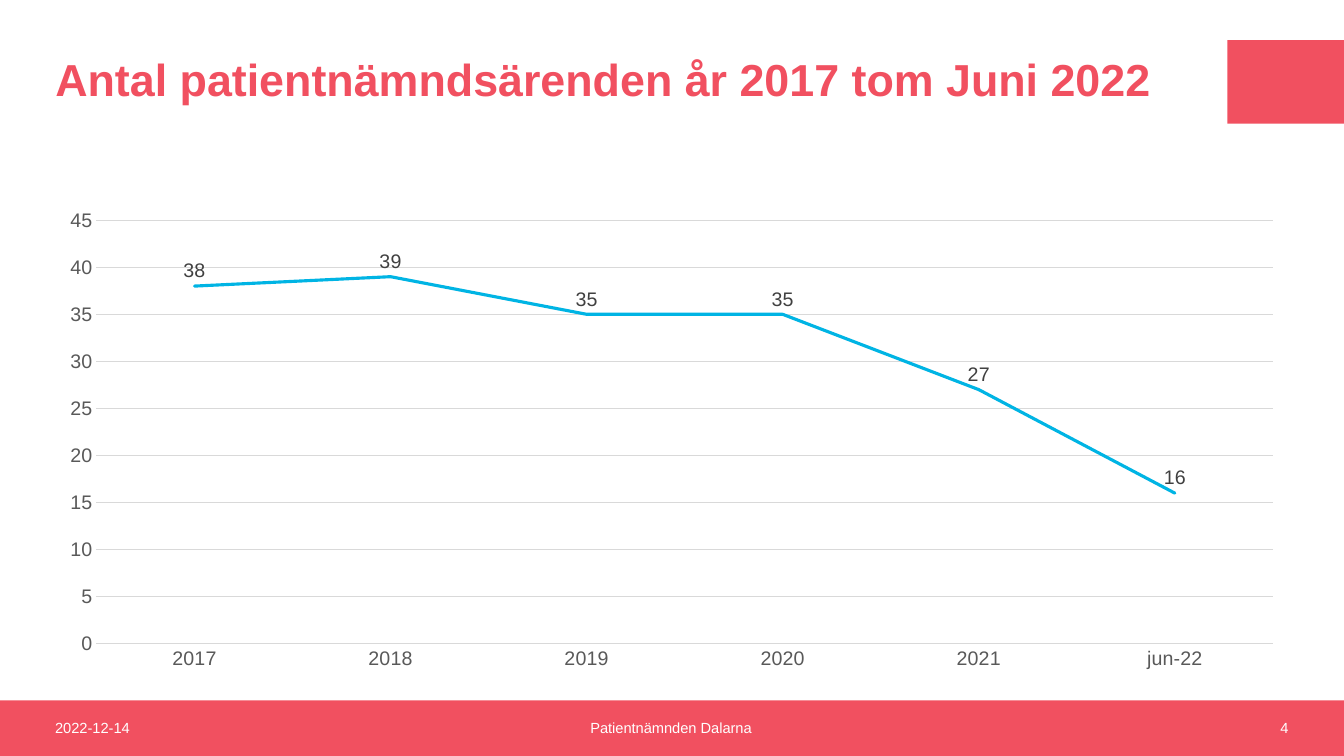
from dataclasses import dataclass

from lxml import etree
from pptx import Presentation
from pptx.chart.data import CategoryChartData
from pptx.dml.color import RGBColor
from pptx.enum.chart import XL_CHART_TYPE, XL_LABEL_POSITION, XL_MARKER_STYLE, XL_TICK_MARK
from pptx.enum.shapes import MSO_SHAPE
from pptx.enum.text import MSO_ANCHOR, PP_ALIGN
from pptx.util import Cm, Pt

# Content
TITLE = "Antal patientnämndsärenden år 2017 tom Juni 2022"
CASES = {"2017": 38, "2018": 39, "2019": 35, "2020": 35, "2021": 27, "jun-22": 16}
FOOTER = [  # text, left, width (cm), alignment
    ("2022-12-14", 1.14, 7.62, PP_ALIGN.LEFT),
    ("Patientnämnden Dalarna", 9.93, 13.97, PP_ALIGN.CENTER),
    ("4", 25.1, 7.62, PP_ALIGN.RIGHT),
]
BANDS = [  # left, top, width, height (cm)
    (0, 17.65, 33.87, 1.4),
    (30.93, 1.01, 2.94, 2.11),
]


@dataclass(frozen=True)
class Theme:
    font: str = "Arial"
    red: RGBColor = RGBColor(0xF1, 0x50, 0x60)
    blue: RGBColor = RGBColor(0x00, 0xB4, 0xE4)
    white: RGBColor = RGBColor(0xFF, 0xFF, 0xFF)
    axis_text: RGBColor = RGBColor(0x59, 0x59, 0x59)
    label_text: RGBColor = RGBColor(0x40, 0x40, 0x40)
    grid: RGBColor = RGBColor(0xD9, 0xD9, 0xD9)
    title_size: Pt = Pt(32)
    chart_size: Pt = Pt(14)
    footer_size: Pt = Pt(10.5)


THEME = Theme()


def style_font(font, size, color, bold=False):
    font.name, font.size, font.bold = THEME.font, size, bold
    font.color.rgb = color


def style_line(line, color, width):
    line.color.rgb = color
    line.width = Pt(width)


def add_band(slide, box):
    band = slide.shapes.add_shape(MSO_SHAPE.RECTANGLE, *map(Cm, box))
    band.shadow.inherit = False
    band.fill.solid()
    band.fill.fore_color.rgb = THEME.red
    band.line.fill.background()


def set_title(slide):
    title = slide.shapes.title
    title.left, title.top, title.width, title.height = map(Cm, (1.14, 0.38, 29.49, 3.35))
    title.text_frame.text = TITLE
    title.text_frame.vertical_anchor = MSO_ANCHOR.MIDDLE
    heading = title.text_frame.paragraphs[0]
    heading.alignment = PP_ALIGN.LEFT
    heading.line_spacing = 0.9
    style_font(heading.font, THEME.title_size, THEME.red, bold=True)


def add_footer_part(slide, text, left, width, alignment):
    frame = slide.shapes.add_textbox(Cm(left), Cm(17.65), Cm(width), Cm(1.37)).text_frame
    frame.word_wrap = True
    frame.vertical_anchor = MSO_ANCHOR.MIDDLE
    frame.text = text
    frame.paragraphs[0].alignment = alignment
    style_font(frame.paragraphs[0].font, THEME.footer_size, THEME.white)


def add_cases_chart(slide):
    cases = CategoryChartData()
    cases.categories = list(CASES)
    cases.add_series("Series 1", list(CASES.values()))
    chart = slide.shapes.add_chart(
        XL_CHART_TYPE.LINE, Cm(1.14), Cm(5.03), Cm(31.57), Cm(12.09), cases
    ).chart
    chart.has_legend = chart.has_title = False
    style_font(chart.font, THEME.chart_size, THEME.axis_text)

    # Axes
    years, counts = chart.category_axis, chart.value_axis
    for axis in (years, counts):
        axis.major_tick_mark = axis.minor_tick_mark = XL_TICK_MARK.NONE
        style_font(axis.tick_labels.font, THEME.chart_size, THEME.axis_text)
    style_line(years.format.line, THEME.grid, 0.75)
    counts.format.line.fill.background()
    counts.minimum_scale, counts.maximum_scale, counts.major_unit = 0, 45, 5
    style_line(counts.major_gridlines.format.line, THEME.grid, 0.75)

    # Line and its values
    plot = chart.plots[0]
    plot.vary_by_categories = False
    trend = plot.series[0]
    trend.smooth = False
    trend.marker.style = XL_MARKER_STYLE.NONE
    style_line(trend.format.line, THEME.blue, 2.25)
    line_xml = trend.format.line.fill._xPr
    line_xml.set("cap", "rnd")
    etree.SubElement(line_xml, "{http://schemas.openxmlformats.org/drawingml/2006/main}round")
    labels = trend.data_labels
    labels.show_value = True
    labels.position = XL_LABEL_POSITION.ABOVE
    style_font(labels.font, THEME.chart_size, THEME.label_text)


def main():
    deck = Presentation()
    deck.slide_width, deck.slide_height = Cm(33.87), Cm(19.05)
    slide = deck.slides.add_slide(deck.slide_layouts[5])

    for box in BANDS:
        add_band(slide, box)
    set_title(slide)
    for part in FOOTER:
        add_footer_part(slide, *part)
    add_cases_chart(slide)

    deck.save("out.pptx")


if __name__ == "__main__":
    main()
